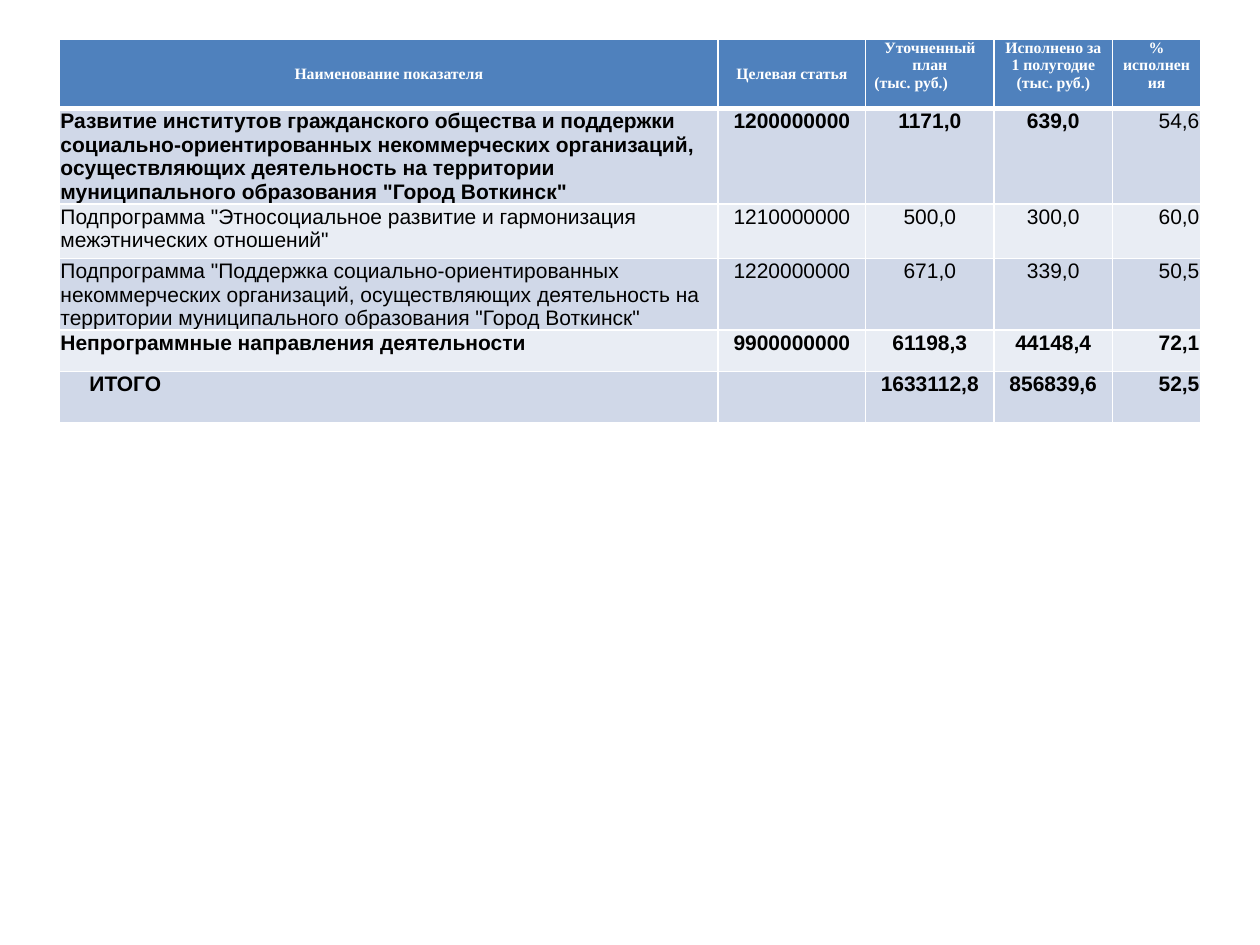
from lxml import etree
from pptx import Presentation, util as u
from pptx.dml.color import RGBColor
from pptx.enum import text
from pptx.oxml.ns import qn

COLOURS = {
    "header": "4F81BD",
    "odd": "D0D8E8",
    "even": "E9EDF4",
    "line": "FFFFFF",
    "header_text": "FFFFFF",
    "body_text": "000000",
}
LEFT, CENTER, RIGHT = (
    text.PP_ALIGN.LEFT, text.PP_ALIGN.CENTER, text.PP_ALIGN.RIGHT)

# Table sizes in grid units: the slide is 100 columns by 75 rows.
COLUMN_SPANS = [52.3, 11.7, 10.2, 9.4, 7]
ROW_SPANS = [5.5, 7.6, 4.3, 5.7, 3.3, 4]

# Each header cell is a list of (text, alignment) paragraphs.
HEADERS = [
    [("Наименование показателя", CENTER)],
    [("Целевая статья", CENTER)],
    [("Уточненный план", CENTER), ("(тыс. руб.)", LEFT)],
    [("Исполнено за 1 полугодие", CENTER), ("(тыс. руб.)", CENTER)],
    [("% исполнения", CENTER)],
]
# Each body row is its cell texts and how many leading cells are bold.
BODY = [
    (['Развитие институтов гражданского общества и поддержки '
      'социально-ориентированных некоммерческих организаций, '
      'осуществляющих деятельность на территории муниципального '
      'образования "Город Воткинск"',
      "1200000000", "1171,0", "639,0", "54,6"], 4),
    (['Подпрограмма "Этносоциальное развитие и гармонизация '
      'межэтнических отношений"',
      "1210000000", "500,0", "300,0", "60,0"], 0),
    (['Подпрограмма "Поддержка социально-ориентированных '
      'некоммерческих организаций, осуществляющих деятельность на '
      'территории муниципального образования "Город Воткинск"',
      "1220000000", "671,0", "339,0", "50,5"], 0),
    (["Непрограммные направления деятельности",
      "9900000000", "61198,3", "44148,4", "72,1"], 5),
    (["ИТОГО", "", "1633112,8", "856839,6", "52,5"], 5),
]
BODY_ALIGNMENT = [LEFT, CENTER, CENTER, CENTER, RIGHT]


class BudgetSlide:
    def __init__(self, deck):
        self.unit = deck.slide_width / 100
        self.slide = deck.slides.add_slide(deck.slide_layouts[6])

    def span(self, count):
        return u.Emu(round(count * self.unit))

    def table(self, left, top, columns, rows):
        frame = self.slide.shapes.add_table(
            len(rows), len(columns), self.span(left), self.span(top),
            self.span(sum(columns)), self.span(sum(rows)))
        table = frame.table
        for column, width in zip(table.columns, columns):
            column.width = self.span(width)
        for row, height in zip(table.rows, rows):
            row.height = self.span(height)
        return table

    def background(self, cell, fill, top=1, bottom=1):
        """Set the cell's borders, in points, then its fill."""
        properties = cell._tc.get_or_add_tcPr()
        for side, points in zip("LRTB", (1, 1, top, bottom)):
            line = etree.SubElement(
                properties, qn(f"a:ln{side}"), w=str(u.Pt(points)))
            solid = etree.SubElement(line, qn("a:solidFill"))
            etree.SubElement(solid, qn("a:srgbClr"), val=COLOURS["line"])
        cell.fill.solid()
        cell.fill.fore_color.rgb = RGBColor.from_string(COLOURS[fill])

    def add_text(self, cell, paragraphs, font, size, colour, bold):
        frame = cell.text_frame
        for index, (words, alignment) in enumerate(paragraphs):
            para = frame.add_paragraph() if index else frame.paragraphs[0]
            para.alignment = alignment
            span = para.add_run()
            span.text = words
            span.font.name = font
            span.font.size = u.Pt(size)
            span.font.bold = bold
            span.font.color.rgb = RGBColor.from_string(COLOURS[colour])

    def margins(self, cell, side, top):
        cell.margin_left = cell.margin_right = self.span(side)
        cell.margin_top = self.span(top)
        cell.margin_bottom = 0

    def header_cell(self, cell, paragraphs, middle):
        self.background(cell, "header", bottom=3)
        self.margins(cell, 0.7, 0)
        if middle:
            cell.vertical_anchor = text.MSO_ANCHOR.MIDDLE
        self.add_text(cell, paragraphs, "Times New Roman", 9,
                      "header_text", True)

    def body_cell(self, cell, words, alignment, row, bold):
        self.background(cell, "odd" if row % 2 else "even",
                        top=3 if row == 1 else 1)
        if words:
            self.margins(cell, 0.1, 0.1)
            self.add_text(cell, [(words, alignment)], "Arial", 12,
                          "body_text", bold)

    def indent(self, cell, count):
        para = cell.text_frame.paragraphs[0]
        para._p.get_or_add_pPr().set("marL", str(self.span(count)))


def main():
    deck = Presentation()
    deck.slide_width, deck.slide_height = u.Inches(10), u.Inches(7.5)
    page = BudgetSlide(deck)
    table = page.table(4.7, 3.1, COLUMN_SPANS, ROW_SPANS)
    for column, paragraphs in enumerate(HEADERS):
        page.header_cell(table.cell(0, column), paragraphs, column < 2)
    for row, (texts, bold_count) in enumerate(BODY, 1):
        for column, words in enumerate(texts):
            page.body_cell(table.cell(row, column), words,
                           BODY_ALIGNMENT[column], row, column < bold_count)
    page.indent(table.cell(len(BODY), 0), 2.3)
    deck.save("out.pptx")


if __name__ == "__main__":
    main()
